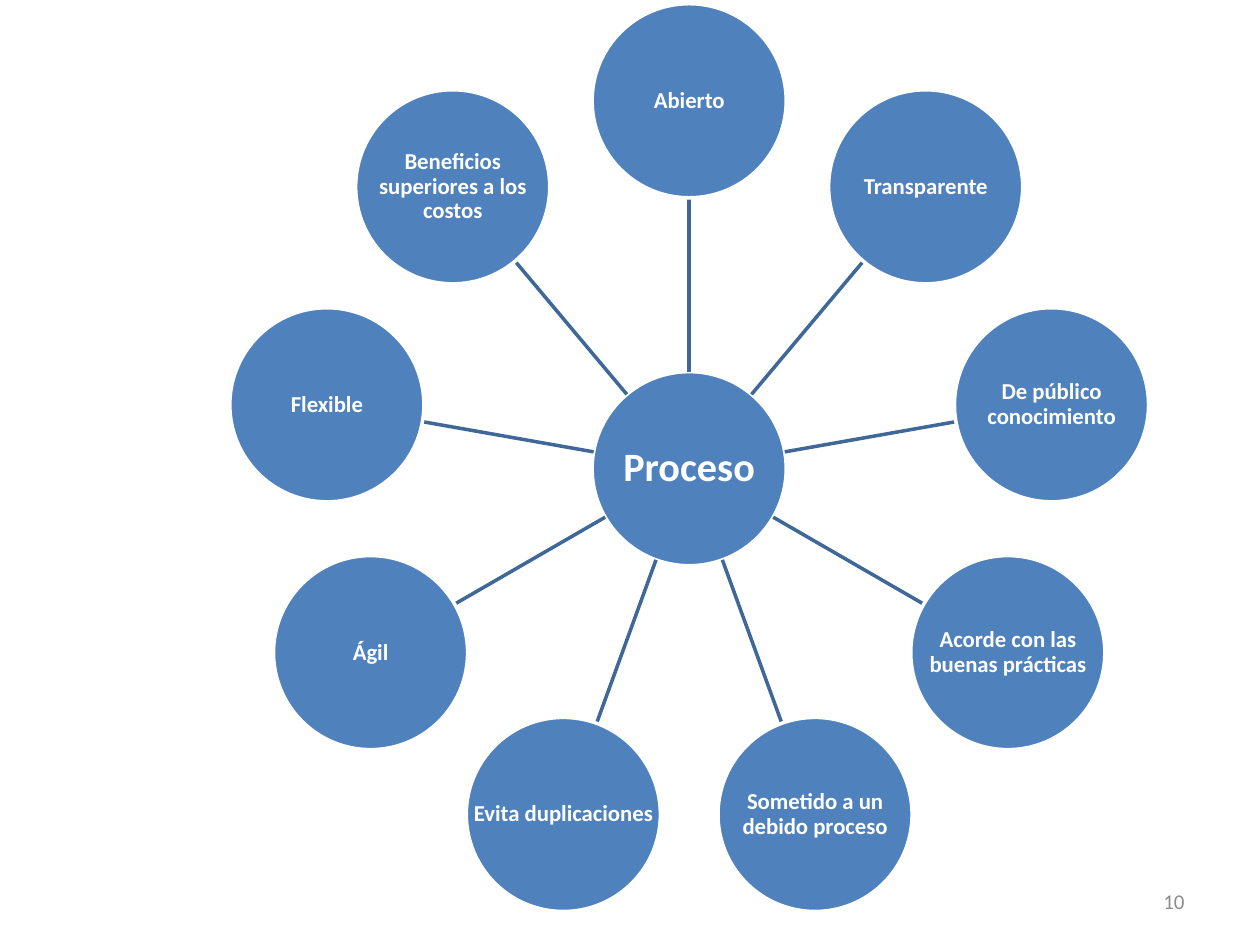
import math

import pptx
import pptx.util
from lxml import etree
from pptx.dml.color import RGBColor
from pptx.enum.shapes import MSO_CONNECTOR, MSO_SHAPE
from pptx.enum.text import MSO_ANCHOR, PP_ALIGN
from pptx.oxml.ns import qn
from pptx.util import Inches, Pt

HUB = "Proceso"
QUALITIES = [  # clockwise from the top
    "Abierto",
    "Transparente",
    "De público conocimiento",
    "Acorde con las buenas prácticas",
    "Sometido a un debido proceso",
    "Evita duplicaciones",
    "Ágil",
    "Flexible",
    "Beneficios superiores a los costos",
]
PAGE_NUMBER = "10"

COLORS = {"circle": "4F81BD", "spoke": "3F6797", "white": "FFFFFF", "number": "8C8C8C"}
FONT = "Calibri"
CENTER_X, CENTER_Y = 5.47, 3.72
ORBIT = 2.92
DIAMETER = 1.54


def color(name):
    return RGBColor.from_string(COLORS[name])


def on_ring(radius, angle):
    """Point at a clockwise angle from the top, measured around the hub."""
    return CENTER_X + radius * math.sin(angle), CENTER_Y - radius * math.cos(angle)


def add_text(page, text, left, top, width, height, size, color_name, align, bold=False):
    box = page.shapes.add_textbox(Inches(left), Inches(top), Inches(width), Inches(height))
    frame = box.text_frame
    frame.text = text
    frame.word_wrap = True
    frame.vertical_anchor = MSO_ANCHOR.MIDDLE
    para = frame.paragraphs[0]
    para.alignment = align
    font = para.runs[0].font
    font.name, font.size, font.bold = FONT, Pt(size), bold
    font.color.rgb = color(color_name)
    return box


def add_circle(page, text, x, y, size, inset):
    """Circle with its label in a box as wide as the whole circle."""
    bounds = (x - DIAMETER / 2, y - DIAMETER / 2, DIAMETER, DIAMETER)
    circle = page.shapes.add_shape(MSO_SHAPE.OVAL, *map(Inches, bounds))
    circle.shadow.inherit = False
    circle.fill.solid()
    circle.fill.fore_color.rgb = color("circle")
    circle.line.color.rgb = color("white")
    circle.line.width = Pt(2)

    frame = add_text(page, text, *bounds, size, "white", PP_ALIGN.CENTER, True).text_frame
    frame.margin_left = frame.margin_right = Inches(inset)
    frame.margin_top = frame.margin_bottom = Inches(inset)
    frame.paragraphs[0].line_spacing = 0.9


def add_spoke(page, angle):
    ends = on_ring(DIAMETER / 2, angle) + on_ring(ORBIT - DIAMETER / 2, angle)
    spoke = page.shapes.add_connector(MSO_CONNECTOR.STRAIGHT, *map(Inches, ends))
    spoke.line.color.rgb = color("spoke")
    spoke.line.width = Pt(2)
    etree.SubElement(spoke._element.spPr, qn("a:effectLst"))


def main():
    deck = pptx.Presentation()
    deck.slide_width, deck.slide_height = Inches(10), Inches(7.5)
    page = deck.slides.add_slide(deck.slide_layouts[6])

    add_circle(page, HUB, CENTER_X, CENTER_Y, 23, 0.02)
    for index, quality in enumerate(QUALITIES):
        angle = 2 * math.pi * index / len(QUALITIES)
        add_spoke(page, angle)
        add_circle(page, quality, *on_ring(ORBIT, angle), 13, 0.01)

    add_text(page, PAGE_NUMBER, 7.17, 6.95, 2.33, 0.4, 12, "number", PP_ALIGN.RIGHT)
    deck.save("out.pptx")


if __name__ == "__main__":
    main()
